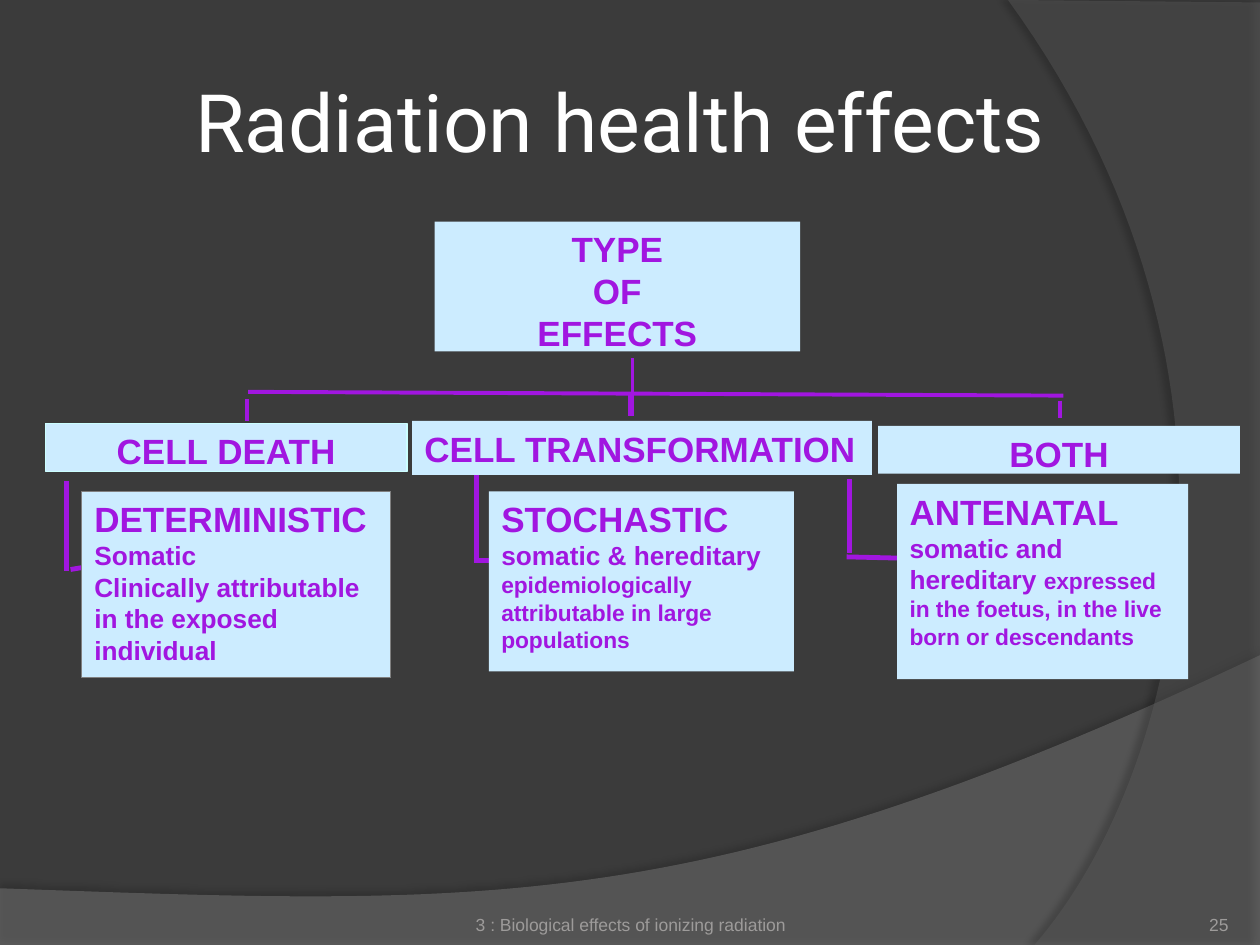
import pptx
import pptx.util
import pptx.dml.color
import pptx.enum.dml
import pptx.enum.shapes
import pptx.enum.text
import pptx.oxml
import pptx.oxml.ns
from lxml import etree

Inches, Pt = pptx.util.Inches, pptx.util.Pt
ALIGN = pptx.enum.text.PP_ALIGN
ANCHOR = pptx.enum.text.MSO_ANCHOR

THEME = {
    "background": "3B3B3B", "title": "FFFFFF", "footer": "9D9B9A",
    "purple": "A116E0", "box": "CCECFF",
    "title_font": "Roboto", "body_font": "Arial",
    "title_size": 46, "heading": 20, "body": 15, "detail": 13, "footer_size": 10,
}

TITLE = ("Radiation health effects", (1.5, 0.33, 8.17, 1.25))
FOOTERS = [
    ("3 : Biological effects of ionizing radiation", (3.42, 7.02, 3.17, 0.4), ALIGN.CENTER),
    ("25", (8.92, 7.02, 0.83, 0.4), ALIGN.RIGHT),
]

# Each paragraph is a list of (text, size) runs.
HEADINGS = [
    (["TYPE", "OF", "EFFECTS"], (3.45, 1.76, 2.9, 1.03), None),
    (["CELL DEATH"], (0.36, 3.36, 2.87, 0.38), ("CCFFFF", 0.75)),
    (["BOTH"], (6.97, 3.38, 2.87, 0.38), None),
]
WIDE_HEADING = ("CELL TRANSFORMATION", (3.27, 3.34, 3.65, 0.43))
EFFECTS = [
    ([[("DETERMINISTIC", "heading")], [("Somatic", "body")],
      [("Clinically attributable in the exposed individual", "body")]],
     (0.65, 3.9, 2.45, 1.48), ("808080", 0.5)),
    ([[("STOCHASTIC", "heading")], [("somatic & hereditary", "body")],
      [("epidemiologically attributable in large populations", "detail")]],
     (3.88, 3.9, 2.42, 1.43), None),
    ([[("ANTENATAL", "heading")],
      [("somatic and hereditary ", "body"),
       ("expressed in the foetus, in the live born or descendants", "detail")]],
     (7.12, 3.84, 2.31, 1.55), None),
]

# Line width -> (x1, y1, x2, y2)
BRANCHES = {
    2.75: [(0.56, 4.52, 0.74, 4.49), (3.76, 4.45, 3.88, 4.45), (1.96, 3.17, 1.96, 3.34),
           (0.53, 3.82, 0.53, 4.53), (3.78, 3.72, 3.78, 4.44), (6.74, 3.8, 6.74, 4.39),
           (6.72, 4.42, 7.16, 4.43)],
    2.25: [(1.97, 3.11, 8.44, 3.14), (5, 3.13, 5, 3.3), (8.41, 3.18, 8.41, 3.32),
           (5.02, 2.84, 5.02, 3.3)],
}

# Straight corners, then the control points of the curve that starts at the last corner.
SWEEPS = [
    {"corners": [(0, 7.05), (0, 7.51), (10, 7.51), (10, 5.2)],
     "curve": [(5.59, 7.29), (3.91, 7.19), (0, 7.05)],
     "fill": "7F7F7F", "opacity": 45, "shadow": (35, 4, 3.5, 270)},
    {"corners": [(10, 0.02), (10, 7.5), (8.21, 7.5)],
     "curve": [(9.35, 6.19), (10.18, 3), (8, 0)],
     "fill": "5E5E5E", "opacity": 40, "shadow": (45, 4, 4, 180)},
]


def rgb(value):
    return pptx.dml.color.RGBColor.from_string(value)


def place(at):
    return [Inches(length) for length in at]


def bezier(start, control1, control2, end, steps=60):
    """Points along a cubic curve, without its start."""
    points = []
    for step in range(1, steps + 1):
        t = step / steps
        weights = ((1 - t) ** 3, 3 * t * (1 - t) ** 2, 3 * t * t * (1 - t), t ** 3)
        ends = (start, control1, control2, end)
        points.append(tuple(sum(w * p[axis] for w, p in zip(weights, ends)) for axis in (0, 1)))
    return points


def add_sweep(slide, sweep):
    """Translucent background curve with a soft shadow."""
    corners = sweep["corners"]
    outline = [place(p) for p in corners + bezier(corners[-1], *sweep["curve"])]
    builder = slide.shapes.build_freeform(*outline[0])
    builder.add_line_segments(outline[1:], close=True)
    shape = builder.convert_to_shape()
    shape.fill.solid()
    shape.fill.fore_color.rgb = rgb(sweep["fill"])
    shape.line.fill.background()
    properties = shape._element.spPr
    color = properties.find(".//" + pptx.oxml.ns.qn("a:srgbClr"))
    etree.SubElement(color, pptx.oxml.ns.qn("a:alpha"), val=str(sweep["opacity"] * 1000))
    alpha, blur, distance, angle = sweep["shadow"]
    properties.append(pptx.oxml.parse_xml(
        f'<a:effectLst {pptx.oxml.ns.nsdecls("a")}><a:outerShdw blurRad="{Pt(blur)}" '
        f'dist="{Pt(distance)}" dir="{angle * 60000}" algn="ctr" rotWithShape="0">'
        f'<a:srgbClr val="000000"><a:alpha val="{alpha * 1000}"/></a:srgbClr>'
        f'</a:outerShdw></a:effectLst>'))


def add_branch(slide, ends, width):
    line = slide.shapes.add_connector(pptx.enum.shapes.MSO_CONNECTOR.STRAIGHT, *place(ends))
    line.line.color.rgb = rgb(THEME["purple"])
    line.line.width = Pt(width)
    etree.SubElement(line._element.spPr, pptx.oxml.ns.qn("a:effectLst"))


def style(font, color, size, family="body_font", bold=None):
    font.name = THEME[family]
    font.size = Pt(THEME[size])
    font.color.rgb = rgb(THEME[color])
    font.bold = bold


def set_insets(frame, left, top, right, bottom):
    frame.margin_left, frame.margin_top = Inches(left), Inches(top)
    frame.margin_right, frame.margin_bottom = Inches(right), Inches(bottom)


def add_box(slide, paragraphs, at, border=None, align=ALIGN.LEFT):
    box = slide.shapes.add_shape(pptx.enum.shapes.MSO_SHAPE.RECTANGLE, *place(at))
    box.shadow.inherit = False
    box.fill.solid()
    box.fill.fore_color.rgb = rgb(THEME["box"])
    if border:
        box.line.color.rgb = rgb(border[0])
        box.line.width = Pt(border[1])
    else:
        box.line.fill.background()
    frame = box.text_frame
    frame.word_wrap = True
    frame.vertical_anchor = ANCHOR.TOP
    for index, runs in enumerate(paragraphs):
        paragraph = frame.add_paragraph() if index else frame.paragraphs[0]
        paragraph.alignment = align
        style(paragraph.font, "purple", runs[0][1], bold=True)
        for text, size in runs:
            run = paragraph.add_run()
            run.text = text
            if size != runs[0][1]:
                run.font.size = Pt(THEME[size])
    return box


def add_footer(slide, text, at, align):
    frame = slide.shapes.add_textbox(*place(at)).text_frame
    frame.word_wrap = True
    frame.vertical_anchor = ANCHOR.BOTTOM
    set_insets(frame, 0, 0, 0, 0)
    frame.text = text
    frame.paragraphs[0].alignment = align
    style(frame.paragraphs[0].font, "footer", "footer_size")


def set_title(slide, text, at):
    title = slide.shapes.title
    title.left, title.top, title.width, title.height = place(at)
    frame = title.text_frame
    frame.text = text
    frame.auto_size = pptx.enum.text.MSO_AUTO_SIZE.NONE
    frame.vertical_anchor = ANCHOR.MIDDLE
    set_insets(frame, 0.05, 0.05, 0.05, 0.05)
    frame.paragraphs[0].alignment = ALIGN.LEFT
    style(frame.paragraphs[0].font, "title", "title_size", "title_font")
    slide.shapes._spTree.append(title._element)  # in front of the background


def main():
    deck = pptx.Presentation()
    deck.slide_width, deck.slide_height = Inches(10), Inches(7.5)
    slide = deck.slides.add_slide(deck.slide_layouts[5])
    slide.background.fill.solid()
    slide.background.fill.fore_color.rgb = rgb(THEME["background"])
    for sweep in SWEEPS:
        add_sweep(slide, sweep)
    for footer in FOOTERS:
        add_footer(slide, *footer)
    set_title(slide, *TITLE)
    for width, branches in BRANCHES.items():
        for ends in branches:
            add_branch(slide, ends, width)
    for paragraphs, at, border in EFFECTS:
        add_box(slide, paragraphs, at, border)
    for lines, at, border in HEADINGS:
        add_box(slide, [[(line, "heading")] for line in lines], at, border, ALIGN.CENTER)
    text, at = WIDE_HEADING
    wide = add_box(slide, [[(text, "heading")]], at).text_frame
    wide.word_wrap = False
    wide.auto_size = pptx.enum.text.MSO_AUTO_SIZE.SHAPE_TO_FIT_TEXT
    deck.save("out.pptx")


if __name__ == "__main__":
    main()
